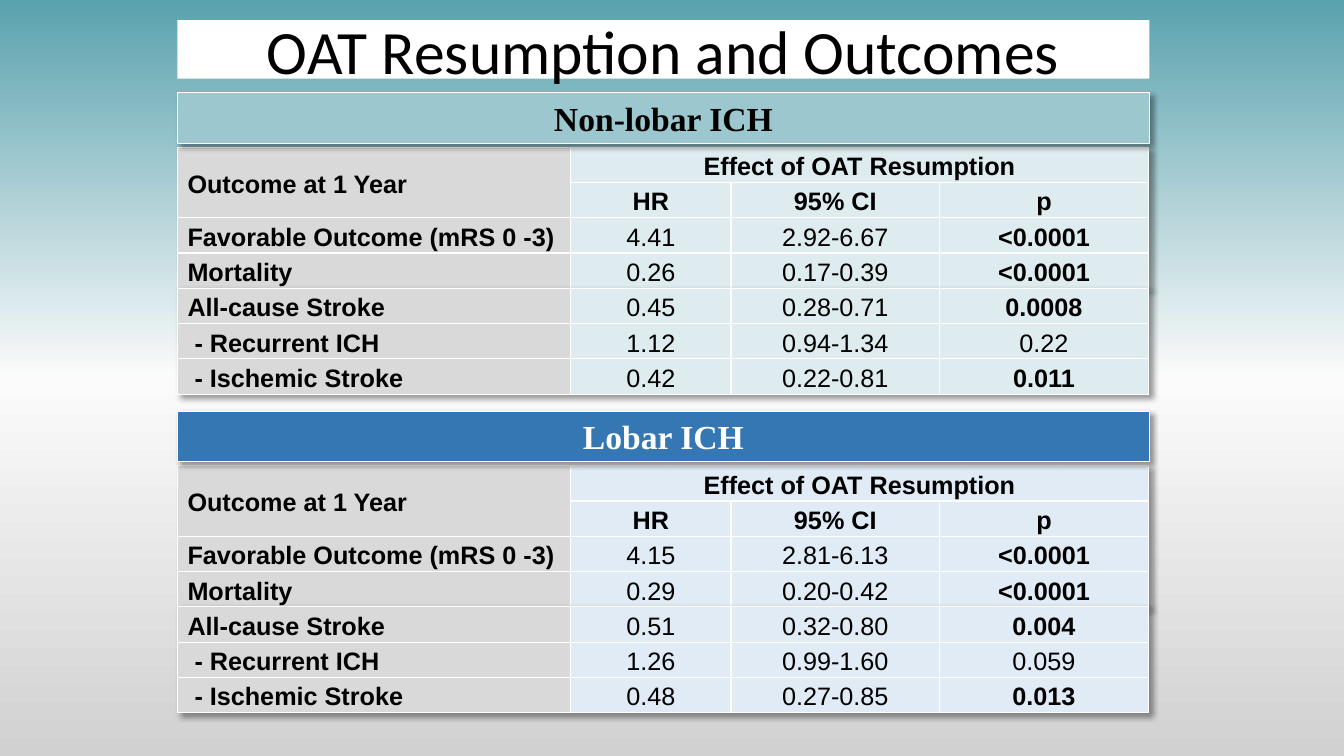
from dataclasses import dataclass

from lxml.etree import SubElement
from pptx import Presentation
from pptx.dml.color import RGBColor
from pptx.enum.shapes import MSO_SHAPE as Shape
from pptx.enum.text import MSO_ANCHOR as Anchor, MSO_AUTO_SIZE as AutoSize, PP_ALIGN as Align
from pptx.oxml.ns import qn
from pptx.util import Inches, Pt


@dataclass(frozen=True)
class Theme:
    """Colours, fonts and sizes of the slide."""
    black: str = "000000"
    white: str = "FFFFFF"
    label: str = "D9D9D9"
    teal: str = "9CC7CE"
    pale_teal: str = "DEECEF"
    blue: str = "3477B2"
    pale_blue: str = "E0EBF6"
    backdrop: tuple = ((0, "5AA2AE"), (50, "FBFBFB"), (100, "D1D1D1"))
    title_font: str = "Calibri"
    banner_font: str = "Times New Roman"
    table_font: str = "Arial"
    title_size: int = 44
    banner_size: int = 24
    table_size: int = 18


THEME = Theme()
COLUMNS = (3.9, 1.59, 2.07, 2.07)
ROW_HEIGHT = 0.35
TABLES_OFFSET = 0.54
HEADINGS = [
    ("Outcome at 1 Year", "Effect of OAT Resumption", "", ""),
    ("", "HR", "95% CI", "p"),
]
NON_LOBAR = [
    ("Favorable Outcome (mRS 0 -3)", "4.41", "2.92-6.67", "<0.0001"),
    ("Mortality", "0.26", "0.17-0.39", "<0.0001"),
    ("All-cause Stroke", "0.45", "0.28-0.71", "0.0008"),
    (" - Recurrent ICH", "1.12", "0.94-1.34", "0.22"),
    (" - Ischemic Stroke", "0.42", "0.22-0.81", "0.011"),
]
LOBAR = [
    ("Favorable Outcome (mRS 0 -3)", "4.15", "2.81-6.13", "<0.0001"),
    ("Mortality", "0.29", "0.20-0.42", "<0.0001"),
    ("All-cause Stroke", "0.51", "0.32-0.80", "0.004"),
    (" - Recurrent ICH", "1.26", "0.99-1.60", "0.059"),
    (" - Ischemic Stroke", "0.48", "0.27-0.85", "0.013"),
]


def rgb(color):
    """Turn a hex string into a colour."""
    return RGBColor.from_string(color)


def add_color(parent, color):
    """Append a colour element and return it."""
    return SubElement(parent, qn("a:srgbClr"), val=color)


def add_shadow(effects):
    """Put a soft diagonal shadow in an effect list."""
    shadow = SubElement(effects, qn("a:outerShdw"), blurRad=str(Pt(4)), dist=str(Pt(3)),
                        dir="2700000", algn="tl", rotWithShape="0")
    SubElement(add_color(shadow, THEME.black), qn("a:alpha"), val="40000")


def write(paragraph, text, font, size, color, bold=False, align=Align.CENTER):
    """Fill a paragraph with one styled run."""
    paragraph.alignment = align
    run = paragraph.add_run()
    run.text = text
    run.font.name = font
    run.font.size = Pt(size)
    run.font.bold = bold
    run.font.color.rgb = rgb(color)


def paint_background(slide):
    """Paint the vertical three-colour gradient."""
    fill = slide.background.fill
    fill.gradient()
    fill.gradient_angle = 270
    stops = slide.element.find(".//" + qn("a:gsLst"))
    stops.clear()
    for position, color in THEME.backdrop:
        add_color(SubElement(stops, qn("a:gs"), pos=str(position * 1000)), color)


def add_block(slide, left, top, width, height, color):
    """Draw a plain filled rectangle."""
    block = slide.shapes.add_shape(Shape.RECTANGLE, Inches(left), Inches(top),
                                   Inches(width), Inches(height))
    block.shadow.inherit = False
    block.fill.solid()
    block.fill.fore_color.rgb = rgb(color)
    block.text_frame.word_wrap = True
    return block


def add_title(slide, left, top, width, height):
    """Draw the slide title on its white bar."""
    title = add_block(slide, left, top, width, height, THEME.white)
    title.line.fill.background()
    title.text_frame.vertical_anchor = Anchor.MIDDLE
    write(title.text_frame.paragraphs[0], "OAT Resumption and Outcomes",
          THEME.title_font, THEME.title_size, THEME.black)


def add_banner(slide, left, top, width, name, color, text_color):
    """Draw the coloured heading of a panel."""
    banner = add_block(slide, left, top, width, 0.5, color)
    banner.line.color.rgb = rgb(THEME.white)
    banner.line.width = Pt(0.75)
    add_shadow(banner.element.spPr.find(qn("a:effectLst")))
    banner.text_frame.vertical_anchor = Anchor.TOP
    banner.text_frame.auto_size = AutoSize.SHAPE_TO_FIT_TEXT
    write(banner.text_frame.paragraphs[0], name, THEME.banner_font,
          THEME.banner_size, text_color, bold=True)


def style_cell(cell, color, left_margin):
    """Give a cell its white borders, fill and margins."""
    properties = cell._tc.get_or_add_tcPr()
    for side in ("lnL", "lnR", "lnT", "lnB"):
        border = SubElement(properties, qn("a:" + side), w=str(Pt(1)))
        add_color(SubElement(border, qn("a:solidFill")), THEME.white)
    cell.fill.solid()
    cell.fill.fore_color.rgb = rgb(color)
    cell.vertical_anchor = Anchor.MIDDLE
    cell.margin_left, cell.margin_right = Inches(left_margin), Inches(0.02)
    cell.margin_top = cell.margin_bottom = 0


def is_bold(row, column):
    """Tell whether a cell is a heading, a label or a significant p value."""
    if row in HEADINGS or column == 0:
        return True
    return column == 3 and float(row[3].lstrip("<")) < 0.05


def add_results(slide, left, top, width, rows, color):
    """Draw one table of outcomes, merging its headings if it has them."""
    frame = slide.shapes.add_table(len(rows), len(COLUMNS), Inches(left), Inches(top),
                                   Inches(width), Inches(ROW_HEIGHT * len(rows)))
    table = frame.table
    table.first_row = table.horz_banding = False
    properties = table._tbl.tblPr
    effects = properties.makeelement(qn("a:effectLst"))
    properties.insert(0, effects)
    add_shadow(effects)
    for column, column_width in zip(table.columns, COLUMNS):
        column.width = Inches(column_width)
    for r, row in enumerate(rows):
        table.rows[r].height = Inches(ROW_HEIGHT)
        for c, text in enumerate(row):
            cell = table.cell(r, c)
            is_label = c == 0
            style_cell(cell, THEME.label if is_label else color, 0.1 if is_label else 0.02)
            paragraph = cell.text_frame.paragraphs[0]
            paragraph.line_spacing = 1.15
            if text:
                write(paragraph, text, THEME.table_font, THEME.table_size, THEME.black,
                      is_bold(row, c), Align.LEFT if is_label else Align.CENTER)
    if rows[0] in HEADINGS:
        table.cell(0, 0).merge(table.cell(1, 0))
        table.cell(0, 1).merge(table.cell(0, 3))


def add_panel(slide, left, top, width, name, outcomes, color, text_color, pale):
    """Draw a banner with its main and stroke tables below."""
    main_rows, stroke_rows = HEADINGS + outcomes[:2], outcomes[2:]
    main_top = top + TABLES_OFFSET
    stroke_top = main_top + ROW_HEIGHT * len(main_rows)
    add_results(slide, left, main_top, width, main_rows, pale)
    add_banner(slide, left, top, width, name, color, text_color)
    add_results(slide, left, stroke_top, width, stroke_rows, pale)


def main():
    """Build and save the slide."""
    deck = Presentation()
    deck.slide_width, deck.slide_height = Inches(13.33), Inches(7.5)
    slide = deck.slides.add_slide(deck.slide_layouts[6])
    left, width = 1.76, 9.64
    paint_background(slide)
    add_title(slide, left, 0.2, width, 0.58)
    add_panel(slide, left, 0.92, width, "Non-lobar ICH", NON_LOBAR,
              THEME.teal, THEME.black, THEME.pale_teal)
    add_panel(slide, left, 4.08, width, "Lobar ICH", LOBAR,
              THEME.blue, THEME.white, THEME.pale_blue)
    deck.save("out.pptx")


if __name__ == "__main__":
    main()
